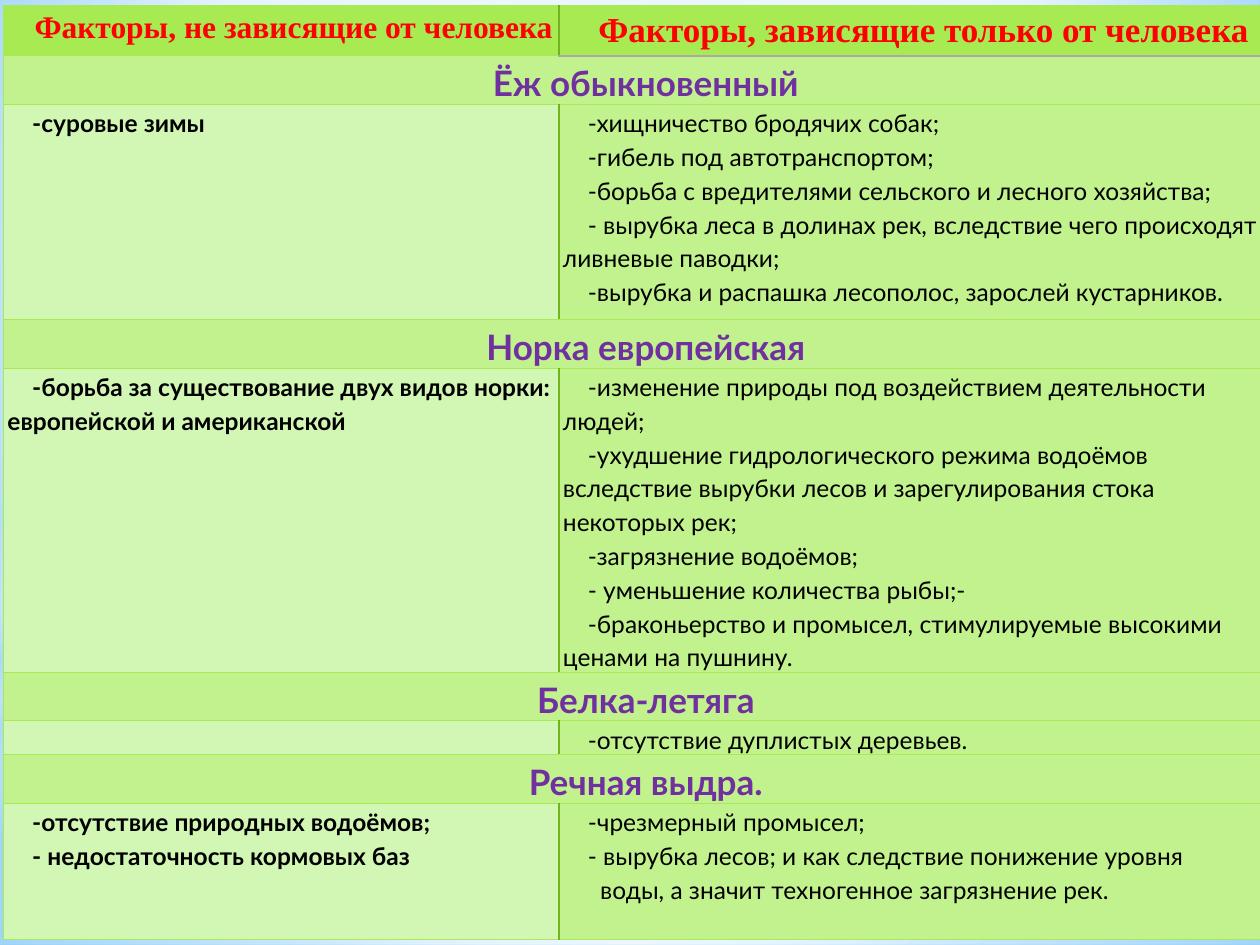
from lxml import etree
from pptx import Presentation
from pptx.dml.color import RGBColor
from pptx.enum.shapes import MSO_SHAPE
from pptx.enum.text import PP_ALIGN
from pptx.oxml import parse_xml
from pptx.oxml.ns import nsdecls, qn
from pptx.util import Cm, Pt

CENTER, LEFT = PP_ALIGN.CENTER, PP_ALIGN.LEFT
RECTANGLE, OVAL = MSO_SHAPE.RECTANGLE, MSO_SHAPE.OVAL

WHITE, SKY = "FFFFFF", "B4DCFA"
THEME = {
    "heading_font": "Times New Roman", "body_font": "Lato",
    "heading": "FF0000", "animal": "7030A0", "body": "000000",
    "green": "A7EA52", "middle_green": "C1F28D", "pale_green": "D2F7B5",
    "divider": "72B41D", "gray": "A9A9A9",
    "background": [(0, "9ED5FF", 100), (60, WHITE, 100), (100, "5BB9FF", 100)],
    "lower_haze": [(0, WHITE, 91), (37, WHITE, 76), (100, SKY, 79)],
    "upper_haze": [(0, WHITE, 89), (48, WHITE, 62), (100, SKY, 79)],
    "horizon": [(0, WHITE, 0), (29, WHITE, 30), (45, SKY, 40),
                (55, WHITE, 26), (65, SKY, 60), (100, WHITE, 0)],
    "glow": [(0, WHITE, 100), (56, WHITE, 0)],
    "small_heading_size": 18, "large_size": 20, "body_size": 14,
    "thin": 0.75, "thick": 1.25, "divider_width": 1.75,
}

SLIDE_WIDTH, SLIDE_HEIGHT = 25.4, 19.05
MIDDLE = (50, 50, 50, 50)
BACKGROUND_FOCUS = (20, 10, 20, 60)
HAZE = [
    (RECTANGLE, 14.17, 4.88, "lower_haze", MIDDLE),
    (RECTANGLE, 0, 14.17, "upper_haze", MIDDLE),
    (RECTANGLE, 10.46, 6.35, "horizon", None),
    (OVAL, 4.45, 14.17, "glow", MIDDLE),
]
HEADINGS = [
    ("Факторы, не зависящие от человека", THEME["small_heading_size"]),
    ("Факторы, зависящие только от человека", THEME["large_size"]),
]
ANIMALS = [
    {"name": "Ёж обыкновенный", "height": 4.34,
     "natural": ["-суровые зимы"],
     "human": [
         "-хищничество бродячих собак;",
         "-гибель под автотранспортом;",
         "-борьба с вредителями сельского и лесного хозяйства;",
         "- вырубка леса в долинах рек, вследствие чего происходят ливневые паводки;",
         "-вырубка и распашка лесополос, зарослей кустарников.",
     ]},
    {"name": "Норка европейская", "height": 6.13,
     "natural": ["-борьба за существование двух видов норки: европейской и американской"],
     "human": [
         "-изменение природы под воздействием деятельности людей;",
         "-ухудшение гидрологического режима водоёмов вследствие вырубки лесов "
         "и зарегулирования стока некоторых рек;",
         "-загрязнение водоёмов;",
         "- уменьшение количества рыбы;-",
         "-браконьерство и промысел, стимулируемые высокими ценами на пушнину.",
     ]},
    {"name": "Белка-летяга", "height": 0.68,
     "natural": [],
     "human": ["-отсутствие дуплистых деревьев."]},
    {"name": "Речная выдра.", "height": 2.75,
     "natural": ["-отсутствие природных водоёмов;", "- недостаточность кормовых баз"],
     "human": [
         "-чрезмерный промысел;",
         "- вырубка лесов; и как следствие понижение уровня",
         "воды, а значит техногенное загрязнение рек.",
     ]},
]
COLUMN_WIDTHS = [11.2, 14.2]
HEADING_HEIGHT, NAME_HEIGHT = 1.01, 0.98
INDENT, CONTINUED_INDENT = 0.5, 0.75


def write(cell, lines, size=THEME["body_size"], font=THEME["body_font"],
          color=THEME["body"], bold=False, align=LEFT):
    cell.margin_left = cell.margin_right = Cm(0.08)
    cell.margin_top = cell.margin_bottom = 0
    frame = cell.text_frame
    for number, line in enumerate(lines or [""]):
        paragraph = frame.add_paragraph() if number else frame.paragraphs[0]
        paragraph.alignment = align
        paragraph.line_spacing = 1.15
        continued = align == LEFT and line and not line.startswith("-")
        indent = CONTINUED_INDENT if continued else INDENT
        paragraph._p.get_or_add_pPr().set("indent", str(Cm(indent)))
        if not line:
            etree.SubElement(paragraph._p, qn("a:endParaRPr"), sz=str(size * 100))
            continue
        run = paragraph.add_run()
        run.text = line
        run.font.size, run.font.name, run.font.bold = Pt(size), font, bold
        run.font.color.rgb = RGBColor.from_string(color)


def paint(cell, fill, **special_borders):
    properties = cell._tc.get_or_add_tcPr()
    for side in "LRTB":
        color, width = special_borders.get(side, (THEME["green"], THEME["thin"]))
        properties.append(parse_xml(
            f'<a:ln{side} {nsdecls("a")} w="{Pt(width)}"><a:solidFill>'
            f'<a:srgbClr val="{color}"/></a:solidFill></a:ln{side}>'))
    cell.fill.solid()
    cell.fill.fore_color.rgb = RGBColor.from_string(fill)


def apply_gradient(fill, element, stops, focus):
    fill.gradient()
    gradient = element.find(".//" + qn("a:gradFill"))
    stop_xml = "".join(
        f'<a:gs pos="{place * 1000}"><a:srgbClr val="{color}">'
        f'<a:alpha val="{alpha * 1000}"/></a:srgbClr></a:gs>'
        for place, color, alpha in stops)
    direction = '<a:lin ang="5400000" scaled="0"/>'
    if focus:
        edges = " ".join(f'{edge}="{value * 1000}"' for edge, value in zip("ltrb", focus))
        direction = f'<a:path path="circle"><a:fillToRect {edges}/></a:path>'
    gradient.getparent().replace(gradient, parse_xml(
        f'<a:gradFill {nsdecls("a")} rotWithShape="1">'
        f'<a:gsLst>{stop_xml}</a:gsLst>{direction}</a:gradFill>'))


def add_sky(slide):
    apply_gradient(slide.background.fill, slide.background._cSld,
                   THEME["background"], BACKGROUND_FOCUS)
    for kind, top, height, stops, focus in HAZE:
        shape = slide.shapes.add_shape(kind, 0, Cm(top), Cm(SLIDE_WIDTH), Cm(height))
        shape.shadow.inherit = False
        shape.line.fill.background()
        apply_gradient(shape.fill, shape._element, THEME[stops], focus)


def add_factor_table(slide):
    heights = [HEADING_HEIGHT]
    for animal in ANIMALS:
        heights += [NAME_HEIGHT, animal["height"]]
    table = slide.shapes.add_table(
        len(heights), len(COLUMN_WIDTHS), Cm(0.07), Cm(0.11),
        Cm(sum(COLUMN_WIDTHS)), Cm(sum(heights))).table
    table.first_row = table.horz_banding = False
    for column, width in zip(table.columns, COLUMN_WIDTHS):
        column.width = Cm(width)
    for row, height in zip(table.rows, heights):
        row.height = Cm(height)

    divider = (THEME["divider"], THEME["divider_width"])
    underline = (THEME["gray"], THEME["thick"])
    for column, (text, size) in enumerate(HEADINGS):
        write(table.cell(0, column), [text], size=size, font=THEME["heading_font"],
              color=THEME["heading"], bold=True, align=CENTER)
    paint(table.cell(0, 0), THEME["green"], R=divider)
    paint(table.cell(0, 1), THEME["green"], L=divider, B=underline)

    for number, animal in enumerate(ANIMALS):
        name_row = 1 + 2 * number
        name_cell, spanned_cell = table.cell(name_row, 0), table.cell(name_row, 1)
        name_cell.merge(spanned_cell)
        write(name_cell, [animal["name"]], size=THEME["large_size"],
              color=THEME["animal"], bold=True, align=CENTER)
        top = {"T": underline} if number == 0 else {}
        paint(name_cell, THEME["middle_green"])
        paint(spanned_cell, THEME["middle_green"], **top)

        natural_cell, human_cell = table.cell(name_row + 1, 0), table.cell(name_row + 1, 1)
        write(natural_cell, animal["natural"], bold=True)
        write(human_cell, animal["human"])
        paint(natural_cell, THEME["pale_green"], R=divider)
        paint(human_cell, THEME["middle_green"], L=divider)


def main():
    """Build the slide on factors that threaten four animals."""
    presentation = Presentation()
    presentation.slide_width, presentation.slide_height = Cm(SLIDE_WIDTH), Cm(SLIDE_HEIGHT)
    slide = presentation.slides.add_slide(presentation.slide_layouts[6])
    add_sky(slide)
    add_factor_table(slide)
    presentation.save("out.pptx")


if __name__ == "__main__":
    main()
